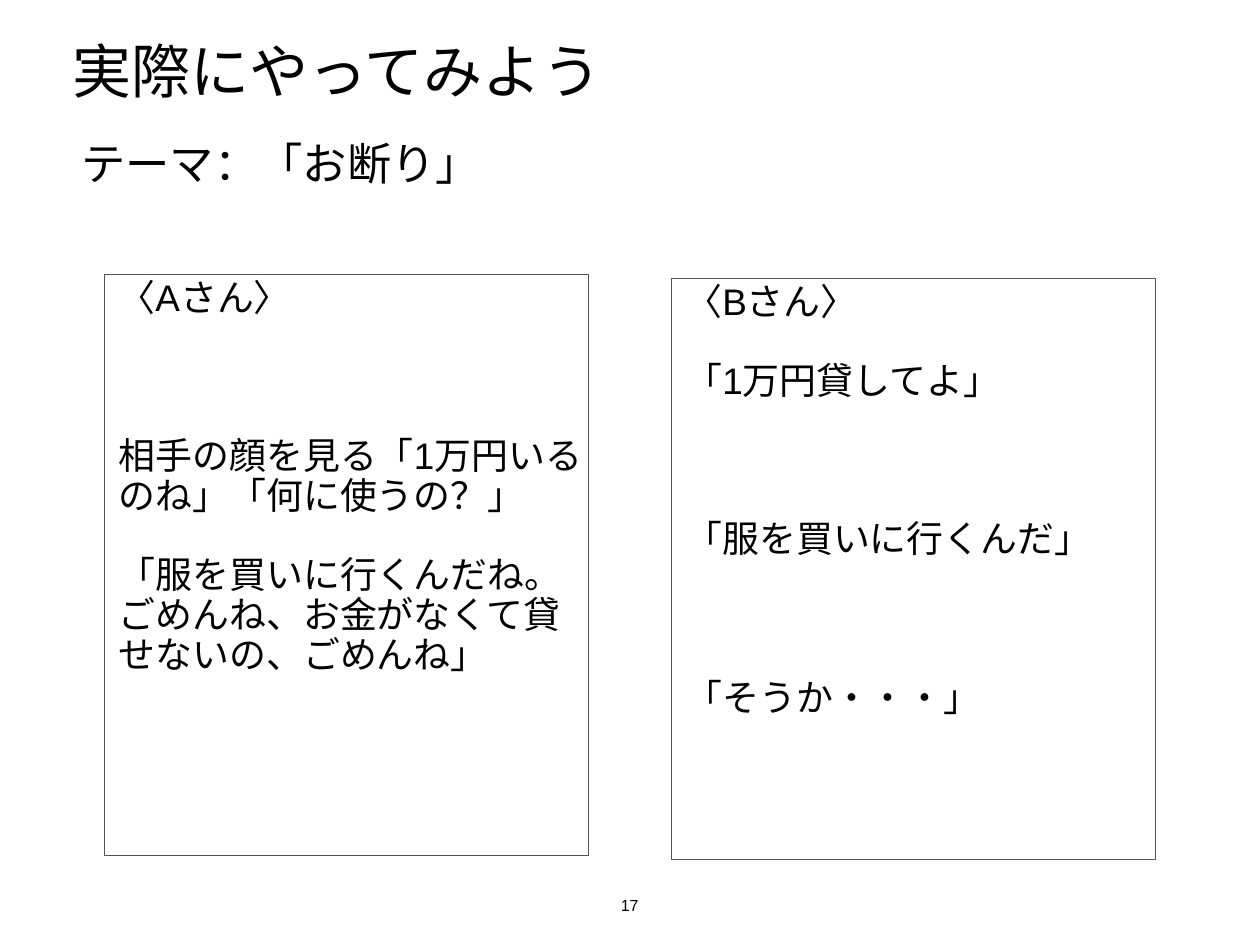
from dataclasses import dataclass

from lxml.etree import SubElement
from pptx import Presentation
from pptx.dml.color import RGBColor
from pptx.enum.shapes import MSO_SHAPE as Preset
from pptx.enum.text import MSO_ANCHOR as Anchor, MSO_AUTO_SIZE as AutoSize, PP_ALIGN as Align
from pptx.oxml.ns import qn
from pptx.shapes.base import BaseShape
from pptx.slide import Slide
from pptx.util import Cm, Pt

FONT = "Arial"
BLACK = "000000"
FRAME_GREY = "535353"
INSET = Cm(0.15)
INDENT = Cm(0.25)
GAP = 32  # points between two lines of dialogue
SKIPPED_TURN = 96.3  # a gap, one silent line and another gap


@dataclass
class Line:
    text: str
    space_before: float = 0


@dataclass
class Block:
    """A text area; lengths in centimetres, text size in points."""
    left: float
    top: float
    width: float
    height: float
    size: float
    lines: list[Line]
    spacing: float = 0.9
    indented: bool = True
    framed: bool = False
    page_number: bool = False


def card(left: float, top: float, lines: list[Line]) -> Block:
    """A framed box with one speaker's part."""
    return Block(left, top, 13.87, 16.66, 30, lines, framed=True)


BLOCKS = [
    card(3, 7.87, [
        Line("〈Aさん〉"),
        Line("相手の顔を見る「1万円いるのね」「何に使うの？」", SKIPPED_TURN),
        Line("「服を買いに行くんだね。ごめんね、お金がなくて貸せないの、ごめんね」", GAP),
    ]),
    Block(1.93, 3.94, 32.23, 1.85, 36, [Line("テーマ：「お断り」")]),
    Block(1.93, 1.22, 32.23, 2.69, 48, [Line("実際にやってみよう")], spacing=0.8, indented=False),
    card(19.25, 7.98, [
        Line("〈Bさん〉"),
        Line("「1万円貸してよ」", GAP),
        Line("「服を買いに行くんだ」", SKIPPED_TURN),
        Line("「そうか・・・」", SKIPPED_TURN),
    ]),
    Block(17.63, 25.6, 0.84, 0.79, 13, [Line("17")], spacing=1, indented=False,
          page_number=True),
]


def color(value: str) -> RGBColor:
    return RGBColor.from_string(value)


def add_area(slide: Slide, block: Block) -> BaseShape:
    """Add the framed rectangle or plain text box that holds the text."""
    bounds = [Cm(v) for v in (block.left, block.top, block.width, block.height)]
    if not block.framed:
        return slide.shapes.add_textbox(*bounds)
    shape = slide.shapes.add_shape(Preset.RECTANGLE, *bounds)
    shape.shadow.inherit = False
    shape.fill.background()
    shape.line.color.rgb = color(FRAME_GREY)
    shape.line.width = Pt(1)
    return shape


def write_lines(shape: BaseShape, block: Block) -> None:
    frame = shape.text_frame
    frame.margin_left = frame.margin_right = INSET
    frame.margin_top = frame.margin_bottom = INSET
    frame.word_wrap = not block.page_number
    frame.vertical_anchor = Anchor.BOTTOM if block.page_number else Anchor.TOP
    if block.page_number:
        frame.auto_size = AutoSize.SHAPE_TO_FIT_TEXT
    for index, line in enumerate(block.lines):
        paragraph = frame.add_paragraph() if index else frame.paragraphs[0]
        paragraph.alignment = Align.CENTER if block.page_number else Align.LEFT
        paragraph.line_spacing = block.spacing
        paragraph.space_before = Pt(line.space_before)
        if block.indented:
            paragraph._p.get_or_add_pPr().set("marL", str(INDENT))
        run = paragraph.add_run()
        run.text = line.text
        run.font.size = Pt(block.size)
        run.font.color.rgb = color(BLACK)
        run.font.name = FONT
        SubElement(run._r.get_or_add_rPr(), qn("a:ea"), typeface=FONT)


def main() -> None:
    presentation = Presentation()
    presentation.slide_width = Cm(36.12)
    presentation.slide_height = Cm(27.1)
    slide = presentation.slides.add_slide(presentation.slide_layouts[6])
    for block in BLOCKS:
        write_lines(add_area(slide, block), block)
    presentation.save("out.pptx")


if __name__ == "__main__":
    main()
